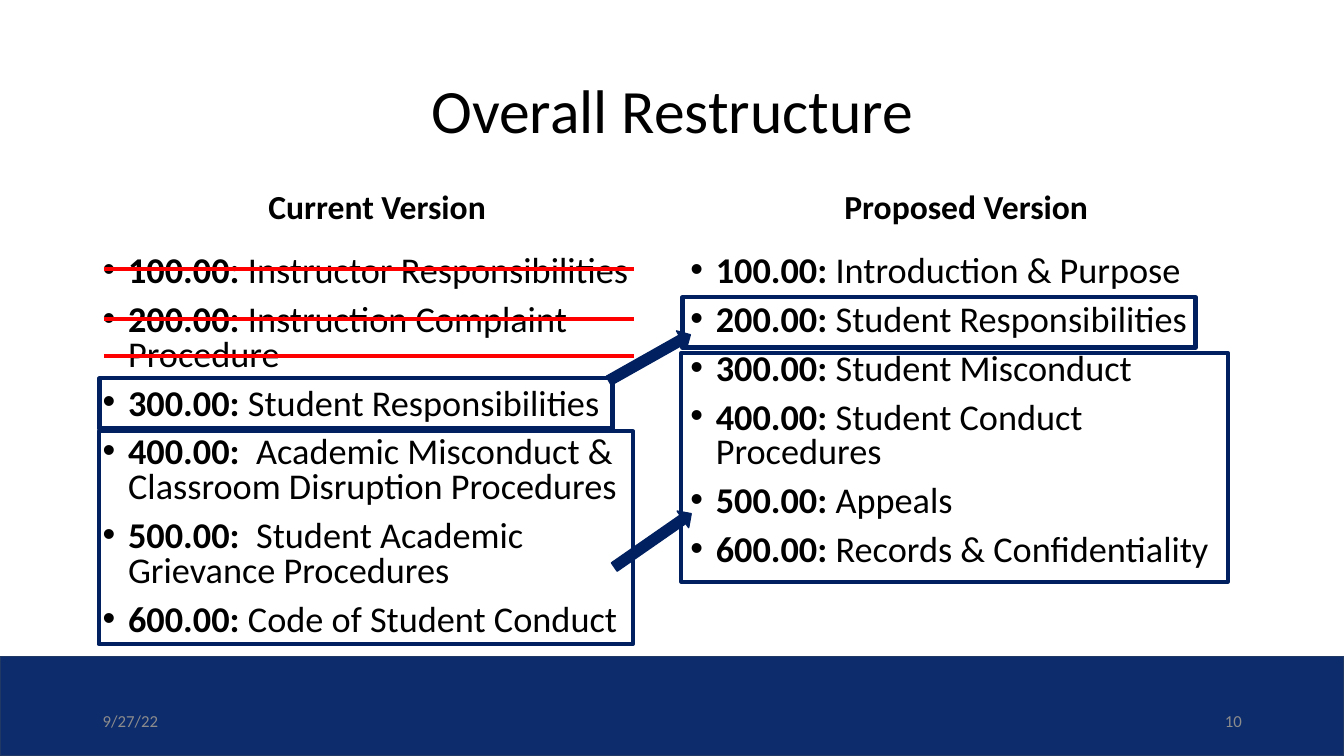
from lxml import etree
from pptx import Presentation
from pptx import util as u
from pptx.dml.color import RGBColor
from pptx.enum import shapes, text
from pptx.oxml.ns import qn

NAVY, RED, BLACK, GRAY = "002060", "FF0000", "000000", "8C8C8C"
LEFT, RIGHT = 2.34, 17.15
START, MID, END = text.PP_ALIGN.LEFT, text.PP_ALIGN.CENTER, text.PP_ALIGN.RIGHT

CURRENT = [
    ("100.00: ", "Instructor Responsibilities"),
    ("200.00: ", "Instruction Complaint Procedure"),
    ("300.00: ", "Student Responsibilities"),
    ("400.00:  ", "Academic Misconduct & Classroom Disruption Procedures"),
    ("500.00:  ", "Student Academic Grievance Procedures"),
    ("600.00: ", "Code of Student Conduct"),
]
PROPOSED = [
    ("100.00: ", "Introduction & Purpose"),
    ("200.00: ", "Student Responsibilities"),
    ("300.00: ", "Student Misconduct"),
    ("400.00: ", "Student Conduct Procedures"),
    ("500.00: ", "Appeals"),
    ("600.00: ", "Records & Confidentiality"),
]


def cm(*sizes):
    return [u.Cm(size) for size in sizes]


def paint(part, color):
    """Give a fill or a line one solid colour."""
    part.fore_color.rgb = RGBColor.from_string(color)


def stroke(line, color, width):
    line.fill.solid()
    paint(line.fill, color)
    line.width = u.Pt(width)


def add_run(para, words, size, color=BLACK, bold=False):
    run = para.add_run()
    run.text = words
    font = run.font
    font.name, font.size, font.bold = "Calibri", u.Pt(size), bold
    font.color.rgb = RGBColor.from_string(color)


def set_frame(frame, anchor):
    frame.word_wrap = True
    frame.auto_size = text.MSO_AUTO_SIZE.NONE
    frame.vertical_anchor = anchor


def add_label(slide, box, words, size, align, color=BLACK, bold=False):
    frame = slide.shapes.add_textbox(*cm(*box)).text_frame
    set_frame(frame, text.MSO_ANCHOR.MIDDLE)
    para = frame.paragraphs[0]
    para.alignment = align
    add_run(para, words, size, color, bold)


def add_bullet(para):
    props = para._p.get_or_add_pPr()
    props.set("marL", str(u.Cm(0.64)))
    props.set("indent", str(u.Cm(-0.64)))
    etree.SubElement(props, qn("a:buFont")).set("typeface", "Arial")
    etree.SubElement(props, qn("a:buChar")).set("char", "•")


def add_list(slide, box, items):
    frame = slide.shapes.add_textbox(*cm(*box)).text_frame
    set_frame(frame, text.MSO_ANCHOR.TOP)
    for i, (code, name) in enumerate(items):
        para = frame.add_paragraph() if i else frame.paragraphs[0]
        add_bullet(para)
        para.line_spacing = 0.8
        para.space_before = u.Pt(10 if i else 0)
        add_run(para, code, 25.9, bold=True)
        add_run(para, name, 25.9)


def add_column(slide, left, width, head, items):
    add_label(slide, (left, 4.04, width, 2.29), head, 24, MID, bold=True)
    add_list(slide, (left, 6.32, width, 10.24), items)


def add_shape(slide, kind, box, color, width, fill=None):
    shape = slide.shapes.add_shape(kind, *cm(*box))
    shape.shadow.inherit = False
    if fill:
        shape.fill.solid()
        paint(shape.fill, fill)
    else:
        shape.fill.background()
    stroke(shape.line, color, width)
    return shape


def add_strike(slide, top):
    line = slide.shapes.add_connector(
        shapes.MSO_CONNECTOR.STRAIGHT, *cm(2.62, top, 15.98, top))
    stroke(line.line, RED, 3)
    etree.SubElement(line._element.spPr, qn("a:effectLst"))


def add_title(slide, words):
    title = slide.shapes.title
    title.left, title.top, title.width, title.height = cm(LEFT, 1.02, 29.21, 3.68)
    set_frame(title.text_frame, text.MSO_ANCHOR.MIDDLE)
    para = title.text_frame.paragraphs[0]
    para.alignment = MID
    para.line_spacing = 0.9
    add_run(para, words, 44)


def main():
    deck = Presentation()
    deck.slide_width, deck.slide_height = cm(33.87, 19.05)
    slide = deck.slides.add_slide(deck.slide_layouts[5])
    rect = shapes.MSO_SHAPE.RECTANGLE
    arrow = shapes.MSO_SHAPE.RIGHT_ARROW

    add_shape(slide, rect, (0, 16.55, 33.87, 2.5), "203864", 1, "0D2C6C")
    add_title(slide, "Overall Restructure")
    add_column(slide, LEFT, 14.33, "Current Version", CURRENT)
    add_column(slide, RIGHT, 14.4, "Proposed Version", PROPOSED)

    for top in (6.78, 8.03, 8.97):
        add_strike(slide, top)
    for box in ((2.51, 9.53, 12.93, 1.27), (2.49, 10.87, 13.46, 5.36),
                (17.17, 8.89, 13.77, 5.77), (17.2, 7.49, 12.93, 1.27)):
        add_shape(slide, rect, box, NAVY, 3)
    for left, top, turn in ((15.19, 8.76, 330.6), (15.27, 13.36, 325.2)):
        move = add_shape(slide, arrow, (left, top, 2.36, 0.51), NAVY, 1, NAVY)
        move.rotation = turn

    add_label(slide, (LEFT, 17.65, 7.62, 1.02), "9/27/22", 12, START, GRAY)
    add_label(slide, (23.93, 17.65, 7.62, 1.02), "10", 12, END, GRAY)
    deck.save("out.pptx")


if __name__ == "__main__":
    main()
